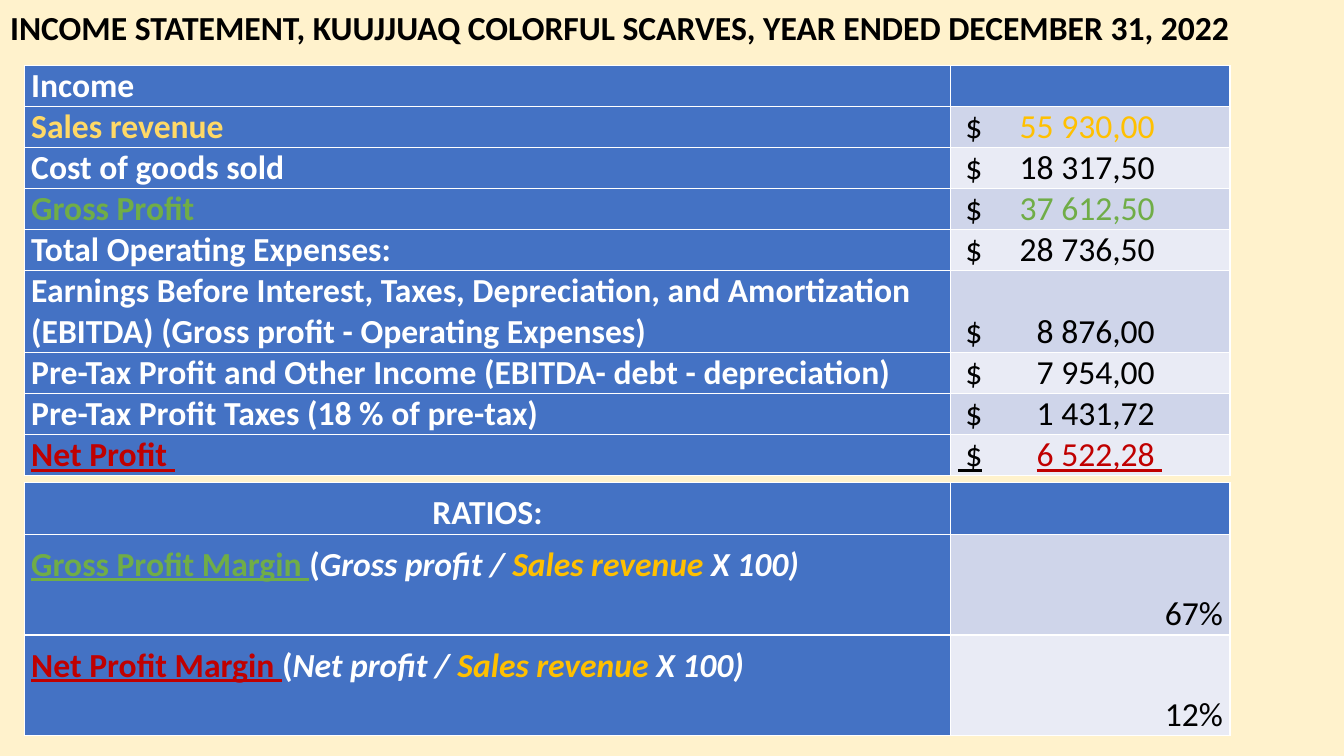
from dataclasses import dataclass

from lxml import etree
from pptx import Presentation
from pptx.dml.color import RGBColor
from pptx.enum.text import MSO_ANCHOR, MSO_AUTO_SIZE, PP_ALIGN
from pptx.oxml.ns import qn
from pptx.util import Inches, Pt

TOP, MIDDLE, BOTTOM = MSO_ANCHOR.TOP, MSO_ANCHOR.MIDDLE, MSO_ANCHOR.BOTTOM
LEFT, CENTER, RIGHT = PP_ALIGN.LEFT, PP_ALIGN.CENTER, PP_ALIGN.RIGHT
NO_AUTOFIT = MSO_AUTO_SIZE.NONE
TITLE_ONLY = 5

BLACK, WHITE, CREAM = "000000", "FFFFFF", "FFF2CC"
BLUE, BANDS = "4472C4", ("CFD5EA", "E9EBF5")
YELLOW, GOLD, GREEN, RED = "FFD966", "FFC000", "70AD47", "C00000"

TABLE_LEFT = 0.24
COLUMN_WIDTHS = (9.19, 2.77)
AMOUNT_TAB = 2.03
ROW_HEIGHT = 0.4
RATIO_SPACING = 1.25


@dataclass
class Span:
    text: str
    color: str = WHITE
    bold: bool = True
    italic: bool = False
    underline: bool = False


@dataclass
class Row:
    label: list[Span]
    value: list[Span]
    height: float = ROW_HEIGHT


def rgb(color: str) -> RGBColor:
    return RGBColor.from_string(color)


def write_spans(para, spans: list[Span]) -> None:
    for span in spans:
        run = para.add_run()
        run.text = span.text
        font = run.font
        font.name, font.size = "Calibri", Pt(24)
        font.bold, font.italic, font.underline = span.bold, span.italic, span.underline
        font.color.rgb = rgb(span.color)


def fill_cell(cell, spans: list[Span], fill: str, anchor, alignment, spacing: float):
    cell.fill.solid()
    cell.fill.fore_color.rgb = rgb(fill)
    cell.margin_left = cell.margin_right = Inches(0.07)
    cell.margin_top = cell.margin_bottom = 0
    cell.vertical_anchor = anchor
    para = cell.text_frame.paragraphs[0]
    para.alignment = alignment
    if spacing != 1:
        para.line_spacing = spacing
    write_spans(para, spans)
    return para


def add_right_tab(para, position: float) -> None:
    tabs = etree.SubElement(para._p.get_or_add_pPr(), qn("a:tabLst"))
    etree.SubElement(tabs, qn("a:tab"), pos=str(Inches(position)), algn="r")


def add_statement_table(page, top: float, rows: list[Row], header_align=LEFT,
                        label_anchor=MIDDLE, value_align=LEFT, spacing: float = 1) -> None:
    """Draw a table with a header row, blue labels and banded values."""
    height = sum(row.height for row in rows)
    table = page.shapes.add_table(
        len(rows), len(COLUMN_WIDTHS), Inches(TABLE_LEFT), Inches(top),
        Inches(sum(COLUMN_WIDTHS)), Inches(height)).table
    table.first_col = True
    for column, width in zip(table.columns, COLUMN_WIDTHS):
        column.width = Inches(width)
    for index, row in enumerate(rows):
        is_header = index == 0
        table.rows[index].height = Inches(row.height)
        fill_cell(table.cell(index, 0), row.label, BLUE, label_anchor,
                  header_align if is_header else LEFT, spacing)
        value_fill = BLUE if is_header else BANDS[(index - 1) % 2]
        para = fill_cell(table.cell(index, 1), row.value, value_fill, BOTTOM,
                         value_align, spacing)
        if value_align == LEFT and row.value:
            add_right_tab(para, AMOUNT_TAB)


def income_row(label: str, amount: str, label_color: str = WHITE, amount_color: str = BLACK,
               underline: bool = False, height: float = ROW_HEIGHT) -> Row:
    return Row(
        [Span(label, label_color, underline=underline)],
        [Span(" $\t", BLACK, bold=False, underline=underline),
         Span(amount + " ", amount_color, bold=False, underline=underline)],
        height)


def ratio_row(name: str, color: str, numerator: str, percent: str) -> Row:
    return Row(
        [Span(name + " ", color, underline=True), Span("("),
         Span(numerator + " / ", italic=True),
         Span("Sales revenue", GOLD, italic=True),
         Span(" X 100)", italic=True)],
        [Span(percent, BLACK, bold=False)],
        height=1.0)


def add_title(page, text: str) -> None:
    title = page.shapes.title
    title.left, title.top = Inches(0), Inches(0.02)
    title.width, title.height = Inches(12.64), Inches(0.5)
    frame = title.text_frame
    frame.auto_size = NO_AUTOFIT
    frame.word_wrap = True
    frame.vertical_anchor = TOP
    para = frame.paragraphs[0]
    para.alignment = LEFT
    write_spans(para, [Span(text, BLACK)])


INCOME_ROWS = [
    Row([Span("Income")], []),
    income_row("Sales revenue", "55 930,00", YELLOW, GOLD),
    income_row("Cost of goods sold", "18 317,50"),
    income_row("Gross Profit", "37 612,50", GREEN, GREEN),
    income_row("Total Operating Expenses:", "28 736,50"),
    income_row("Earnings Before Interest, Taxes, Depreciation, and Amortization "
               "(EBITDA) (Gross profit - Operating Expenses)", "8 876,00",
               height=2 * ROW_HEIGHT),
    income_row("Pre-Tax Profit and Other Income (EBITDA- debt - depreciation)", "7 954,00"),
    income_row("Pre-Tax Profit Taxes (18 % of pre-tax)", "1 431,72"),
    income_row("Net Profit ", "6 522,28", RED, RED, underline=True),
]

RATIO_ROWS = [
    Row([Span("RATIOS:")], [], height=0.5),
    ratio_row("Gross Profit Margin", GREEN, "Gross profit", "67%"),
    ratio_row("Net Profit Margin", RED, "Net profit", "12%"),
]


def main() -> None:
    deck = Presentation()
    deck.slide_width, deck.slide_height = Inches(13.33), Inches(7.5)
    page = deck.slides.add_slide(deck.slide_layouts[TITLE_ONLY])
    page.background.fill.solid()
    page.background.fill.fore_color.rgb = rgb(CREAM)
    add_title(page, "INCOME STATEMENT, KUUJJUAQ COLORFUL SCARVES, YEAR ENDED DECEMBER 31, 2022")
    add_statement_table(page, 0.65, INCOME_ROWS)
    add_statement_table(page, 4.79, RATIO_ROWS, header_align=CENTER, label_anchor=TOP,
                        value_align=RIGHT, spacing=RATIO_SPACING)
    deck.save("out.pptx")


if __name__ == "__main__":
    main()
